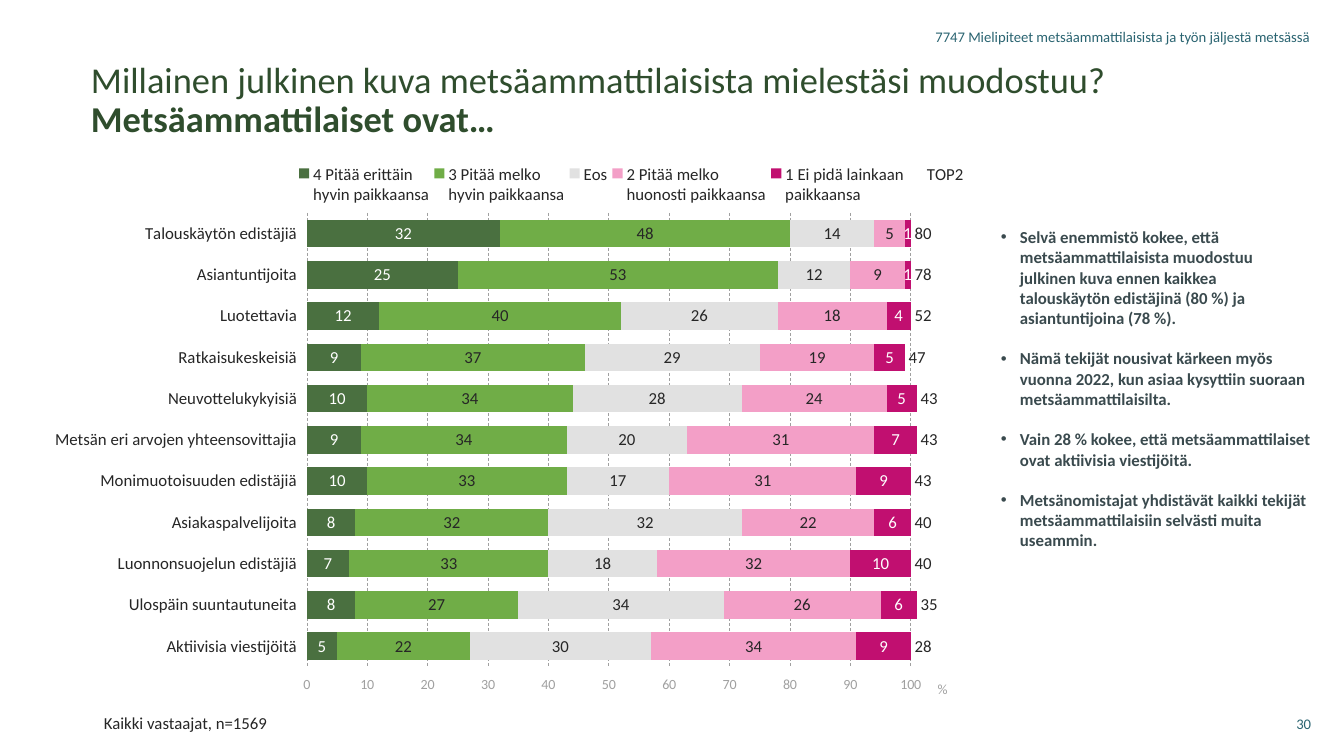
from lxml import etree
from pptx import Presentation
from pptx.chart.data import CategoryChartData
from pptx.dml.color import RGBColor
from pptx.enum.chart import (XL_CHART_TYPE, XL_LABEL_POSITION, XL_LEGEND_POSITION,
                             XL_TICK_LABEL_POSITION, XL_TICK_MARK)
from pptx.enum.dml import MSO_LINE
from pptx.enum.text import MSO_ANCHOR, PP_ALIGN
from pptx.oxml.ns import qn
from pptx.util import Emu, Pt

LEFT, RIGHT = PP_ALIGN.LEFT, PP_ALIGN.RIGHT
TOP, MIDDLE = MSO_ANCHOR.TOP, MSO_ANCHOR.MIDDLE
CENTER, INSIDE_BASE = XL_LABEL_POSITION.CENTER, XL_LABEL_POSITION.INSIDE_BASE
LOW, HIGH = XL_TICK_LABEL_POSITION.LOW, XL_TICK_LABEL_POSITION.HIGH
NO_TICK = XL_TICK_MARK.NONE

COLORS = {
    "teal": "2A6471", "forest": "2F4D2D", "slate": "3A4A4E", "ink": "262626",
    "grey": "A0A0A0", "white": "FFFFFF", "dark_green": "4A7040", "green": "70AD47",
    "light_grey": "E1E1E1", "pink": "F39FC7", "magenta": "C10F70",
}

CATEGORIES = [
    "Talouskäytön edistäjiä", "Asiantuntijoita", "Luotettavia", "Ratkaisukeskeisiä",
    "Neuvottelukykyisiä", "Metsän eri arvojen yhteensovittajia",
    "Monimuotoisuuden edistäjiä", "Asiakaspalvelijoita", "Luonnonsuojelun edistäjiä",
    "Ulospäin suuntautuneita", "Aktiivisia viestijöitä",
]
SERIES = [
    ("4 Pitää erittäin \nhyvin paikkaansa", "dark_green", "white",
     [32, 25, 12, 9, 10, 9, 10, 8, 7, 8, 5]),
    ("3 Pitää melko \nhyvin paikkaansa", "green", "ink",
     [48, 53, 40, 37, 34, 34, 33, 32, 33, 27, 22]),
    ("Eos", "light_grey", "ink", [14, 12, 26, 29, 28, 20, 17, 32, 18, 34, 30]),
    ("2 Pitää melko \nhuonosti paikkaansa", "pink", "ink",
     [5, 9, 18, 19, 24, 31, 31, 22, 32, 26, 34]),
    ("1 Ei pidä lainkaan \npaikkaansa", "magenta", "white",
     [1, 1, 4, 5, 5, 7, 9, 6, 10, 6, 9]),
    ("TOP2", None, "ink", [80, 78, 52, 47, 43, 43, 43, 40, 40, 35, 28]),
]
FINDINGS = [
    "Selvä enemmistö kokee, että metsäammattilaisista muodostuu julkinen kuva ennen "
    "kaikkea talouskäytön edistäjinä (80 %) ja asiantuntijoina (78 %).",
    "Nämä tekijät nousivat kärkeen myös vuonna 2022, kun asiaa kysyttiin suoraan "
    "metsäammattilaisilta.",
    "Vain 28 % kokee, että metsäammattilaiset ovat aktiivisia viestijöitä.",
    "Metsänomistajat yhdistävät kaikki tekijät metsäammattilaisiin selvästi muita useammin.",
]


def px(n):
    return Emu(round(n * 914400 / 100.8))


class SlideBuilder:
    font = "Calibri"
    chart_size = (970, 576)

    def __init__(self, prs):
        self.s = prs.slides.add_slide(prs.slide_layouts[6])

    def style(self, font, size, color, bold=False):
        font.name = self.font
        font.size = Pt(size)
        font.bold = bold
        font.color.rgb = RGBColor.from_string(COLORS[color])

    def frame(self, x, y, w, h, anchor=TOP):
        tf = self.s.shapes.add_textbox(px(x), px(y), px(w), px(h)).text_frame
        tf.word_wrap = True
        tf.vertical_anchor = anchor
        return tf

    def run(self, p, text, size, color, bold=False):
        r = p.add_run()
        r.text = text
        self.style(r.font, size, color, bold)

    def text(self, box, runs, size, color, align=LEFT, anchor=TOP, spacing=1.0):
        p = self.frame(*box, anchor).paragraphs[0]
        p.alignment = align
        p.line_spacing = spacing
        for text, bold in runs:
            self.run(p, text, size, color, bold)

    def bullets(self, box, items, size, color, gap):
        tf = self.frame(*box)
        for i, item in enumerate(items):
            p = tf.add_paragraph() if i else tf.paragraphs[0]
            if i:
                p.space_before = Pt(gap)
            pPr = p._p.get_or_add_pPr()
            pPr.set("marL", str(px(19)))
            pPr.set("indent", str(-px(19)))
            etree.SubElement(pPr, qn("a:buFont")).set("typeface", "Arial")
            etree.SubElement(pPr, qn("a:buChar")).set("char", "•")
            self.run(p, item, size, color, True)

    def place(self, parent, index, *box):
        layout = parent.find(qn("c:layout"))
        if layout is None:
            layout = etree.Element(qn("c:layout"))
            parent.insert(index, layout)
        manual = etree.SubElement(layout, qn("c:manualLayout"))
        if parent.tag == qn("c:plotArea"):
            etree.SubElement(manual, qn("c:layoutTarget")).set("val", "inner")
        for key in ("x", "y"):
            etree.SubElement(manual, qn(f"c:{key}Mode")).set("val", "edge")
        for key, length, full in zip("xywh", box, self.chart_size * 2):
            etree.SubElement(manual, qn(f"c:{key}")).set("val", str(length / full))

    def stacked_bars(self, x, y):
        data = CategoryChartData(number_format="#,##0")
        data.categories = CATEGORIES
        for name, _, _, values in SERIES:
            data.add_series(name, values)
        w, h = self.chart_size
        chart = self.s.shapes.add_chart(XL_CHART_TYPE.BAR_STACKED, px(x), px(y),
                                        px(w), px(h), data).chart
        self.style(chart.font, 12, "slate")
        chart.has_title = False
        plot = chart.plots[0]
        plot.gap_width, plot.overlap = 50, 100
        plot.vary_by_categories = False
        for ser, (_, fill, label_color, _) in zip(plot.series, SERIES):
            if fill:
                ser.format.fill.solid()
                ser.format.fill.fore_color.rgb = RGBColor.from_string(COLORS[fill])
            else:
                ser.format.fill.background()
            labels = ser.data_labels
            labels.show_value = True
            labels.number_format = "#,##0"
            labels.number_format_is_linked = False
            labels.position = CENTER if fill else INSIDE_BASE
            self.style(labels.font, 12, label_color)
        self.axes(chart)
        chart.has_legend = True
        chart.legend.position = XL_LEGEND_POSITION.TOP
        chart.legend.include_in_layout = False
        self.style(chart.legend.font, 12, "ink")
        self.place(chart.legend._element, 1, 287, 12, 675, 52)
        self.place(chart._chartSpace.chart.plotArea, 0, 300, 66, 610, 454)

    def axes(self, chart):
        cat, val = chart.category_axis, chart.value_axis
        for axis, size, color, side in ((cat, 12, "ink", LOW), (val, 10, "grey", HIGH)):
            axis.major_tick_mark = axis.minor_tick_mark = NO_TICK
            axis.tick_label_position = side
            axis.format.line.fill.background()
            self.style(axis.tick_labels.font, size, color)
        cat.reverse_order = True
        val.minimum_scale, val.maximum_scale, val.major_unit = 0, 101.01, 10
        val.tick_labels.number_format = "General"
        val.tick_labels.number_format_is_linked = False
        val.has_major_gridlines = True
        grid = val.major_gridlines.format.line
        grid.color.rgb = RGBColor.from_string(COLORS["grey"])
        grid.width = Pt(0.5)
        grid.dash_style = MSO_LINE.DASH
        title = val.axis_title
        self.run(title.text_frame.paragraphs[0], "%", 10, "grey")
        self.place(title._element, 1, 928, 531)


def main():
    prs = Presentation()
    prs.slide_width, prs.slide_height = px(1344), px(756)
    b = SlideBuilder(prs)
    b.text((867, 17, 453, 40),
           [("7747 Mielipiteet metsäammattilaisista ja työn jäljestä metsässä", False)],
           10.5, "teal", RIGHT, MIDDLE)
    b.text((1276, 704, 45, 40), [("30", False)], 10.5, "teal", RIGHT, MIDDLE)
    b.stacked_bars(7, 147)
    b.text((94, 710, 925, 28), [("Kaikki vastaajat, n=1569", False)], 12, "ink", spacing=0.9)
    b.text((81, 57, 1181, 71),
           [("Millainen julkinen kuva metsäammattilaisista mielestäsi muodostuu? ", False),
            ("Metsäammattilaiset ovat…", True)], 26, "forest", spacing=0.9)
    b.bullets((991, 222, 330, 356), FINDINGS, 12, "slate", 14.6)
    prs.save("out.pptx")


if __name__ == "__main__":
    main()
